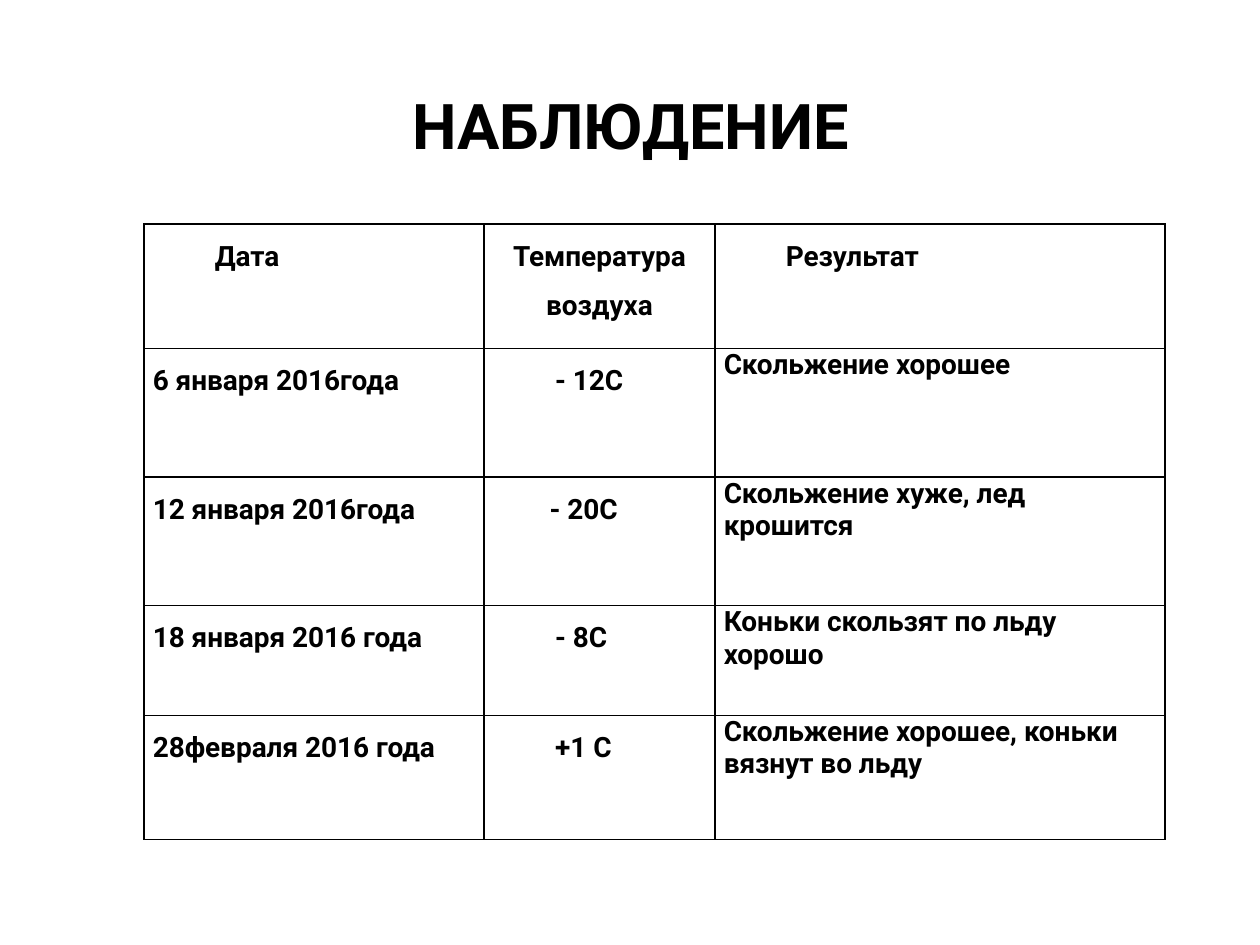
from dataclasses import dataclass

from lxml.etree import SubElement
from pptx import Presentation
from pptx.dml.color import RGBColor
from pptx.enum.text import MSO_ANCHOR, PP_ALIGN
from pptx.oxml.ns import qn
from pptx.slide import Slide
from pptx.table import _Cell
from pptx.text.text import _Paragraph
from pptx.util import Cm, Pt

COLORS = {"ink": "000000", "paper": "FFFFFF"}
FONT = "Roboto"
COLUMN_WIDTHS = (6.86, 4.65, 9.07)
ROW_HEIGHTS = (2.51, 2.59, 2.59, 2.21, 2.51)
BORDER_TAGS = ("a:lnL", "a:lnR", "a:lnT", "a:lnB")


@dataclass(frozen=True)
class Entry:
    text: str
    indent: float = 0
    spacing: float = 1.5
    align: PP_ALIGN = PP_ALIGN.LEFT


@dataclass(frozen=True)
class Observation:
    date: str
    temperature: str
    result: str
    indent: float = 1.25

    def entries(self) -> tuple[Entry, ...]:
        return (
            Entry(self.date),
            Entry(self.temperature, indent=self.indent),
            Entry(self.result, spacing=1.0),
        )


HEADINGS = (
    Entry("Дата", indent=1.25),
    Entry("Температура воздуха", align=PP_ALIGN.CENTER),
    Entry("Результат", indent=1.25),
)
OBSERVATIONS = (
    Observation("6 января 2016года", "- 12С", "Скольжение хорошее"),
    Observation("12 января 2016года", "- 20С", "Скольжение хуже, лед крошится", 1.14),
    Observation("18 января 2016 года", "- 8С", "Коньки скользят по льду хорошо"),
    Observation("28февраля 2016 года", "+1 С", "Скольжение хорошее, коньки вязнут во льду"),
)


def add_bold_run(paragraph: _Paragraph, text: str, size: float) -> None:
    run = paragraph.add_run()
    run.text = text
    run.font.name = FONT
    run.font.size = Pt(size)
    run.font.bold = True
    run.font.color.rgb = RGBColor.from_string(COLORS["ink"])


def add_borders(cell: _Cell) -> None:
    properties = cell._tc.get_or_add_tcPr()
    for tag in BORDER_TAGS:
        border = SubElement(properties, qn(tag), w=str(Pt(1)))
        fill = SubElement(border, qn("a:solidFill"))
        SubElement(fill, qn("a:srgbClr"), val=COLORS["ink"])


def fill_cell(cell: _Cell, entry: Entry) -> None:
    cell.margin_left = cell.margin_right = Cm(0.18)
    cell.margin_top = cell.margin_bottom = Cm(0)
    cell.vertical_anchor = MSO_ANCHOR.TOP
    add_borders(cell)
    cell.fill.solid()
    cell.fill.fore_color.rgb = RGBColor.from_string(COLORS["paper"])
    paragraph = cell.text_frame.paragraphs[0]
    paragraph.alignment = entry.align
    paragraph.line_spacing = entry.spacing
    if entry.indent:
        paragraph._p.get_or_add_pPr().set("indent", str(Cm(entry.indent)))
    add_bold_run(paragraph, entry.text, 16)


def add_title(slide: Slide, text: str) -> None:
    title = slide.shapes.add_textbox(Cm(3.1), Cm(1.52), Cm(19.23), Cm(2.41))
    frame = title.text_frame
    frame.word_wrap = True
    frame.vertical_anchor = MSO_ANCHOR.MIDDLE
    frame.margin_bottom = Cm(0.56)
    paragraph = frame.paragraphs[0]
    paragraph.alignment = PP_ALIGN.CENTER
    add_bold_run(paragraph, text, 36)


def add_observations(slide: Slide) -> None:
    rows = [HEADINGS] + [observation.entries() for observation in OBSERVATIONS]
    table = slide.shapes.add_table(
        len(rows), len(COLUMN_WIDTHS), Cm(2.9), Cm(4.52),
        Cm(sum(COLUMN_WIDTHS)), Cm(sum(ROW_HEIGHTS)),
    ).table
    table.first_row = table.horz_banding = False
    for column, width in zip(table.columns, COLUMN_WIDTHS):
        column.width = Cm(width)
    for table_row, height, entries in zip(table.rows, ROW_HEIGHTS, rows):
        table_row.height = Cm(height)
        for cell, entry in zip(table_row.cells, entries):
            fill_cell(cell, entry)


def main() -> None:
    presentation = Presentation()
    presentation.slide_width = Cm(25.4)
    presentation.slide_height = Cm(19.05)
    slide = presentation.slides.add_slide(presentation.slide_layouts[6])
    add_title(slide, "НАБЛЮДЕНИЕ")
    add_observations(slide)
    presentation.save("out.pptx")


if __name__ == "__main__":
    main()
